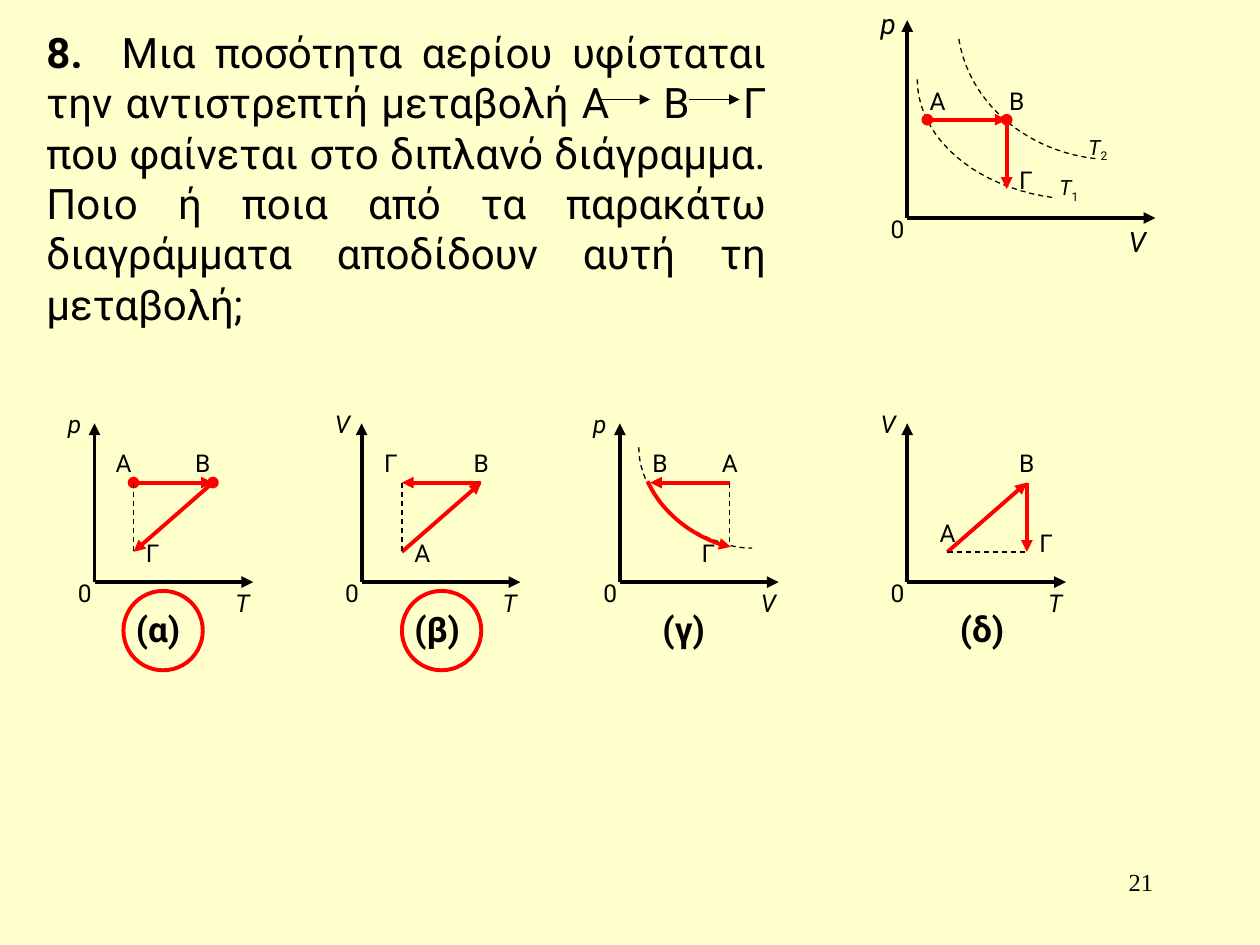
from pptx import Presentation
from pptx.dml.color import RGBColor
from pptx.enum.dml import MSO_LINE_DASH_STYLE as DASH
from pptx.enum.shapes import MSO_CONNECTOR as CONN, MSO_SHAPE as SHAPE
from pptx.enum.text import MSO_AUTO_SIZE as AUTO, PP_ALIGN as ALIGN
from pptx.oxml.ns import qn
from pptx.util import Inches, Pt
from lxml.etree import SubElement

COLORS = {"paper": "FFFFCC", "ink": "000000", "path_red": "FF0000"}
FONT = "Roboto"
THICK, THIN = 2.25, 0.75
FLOOR = 4.62


def rgb(name):
    return RGBColor.from_string(COLORS[name])


def add_run(p, text, size, font=FONT, bold=False, italic=False, gap=0, base=0):
    r = p.add_run()
    r.text = text
    r.font.size = Pt(size)
    r.font.name = font
    r.font.bold = bold
    r.font.italic = italic
    r.font.color.rgb = rgb("ink")
    rPr = r._r.get_or_add_rPr()
    if gap:
        rPr.set("spc", str(gap * 100))
    if base:
        rPr.set("baseline", str(base * 1000))


def add_box(s, x, y, w, h, align=ALIGN.LEFT):
    tf = s.shapes.add_textbox(Inches(x), Inches(y), Inches(w), Inches(h)).text_frame
    tf.word_wrap = True
    tf.auto_size = AUTO.SHAPE_TO_FIT_TEXT
    p = tf.paragraphs[0]
    p.alignment = align
    return p


def add_label(s, text, x, y, w=0.39, h=0.33, size=14, **style):
    p = add_box(s, x, y, w, h)
    add_run(p, text, size, **style)
    return p


def stroke(shape, color, width, dashed=False, head=None, tail=None):
    shape.line.color.rgb = rgb(color)
    shape.line.width = Pt(width)
    if dashed:
        shape.line.dash_style = DASH.DASH
    spPr = shape._element.spPr
    ln = spPr.find(qn("a:ln"))
    for tag, kind in (("a:headEnd", head), ("a:tailEnd", tail)):
        if kind:
            SubElement(ln, qn(tag), type=kind)
    SubElement(spPr, qn("a:effectLst"))


def add_line(s, start, end, color="ink", width=THIN, **ends):
    line = s.shapes.add_connector(CONN.STRAIGHT, *(Inches(v) for v in (*start, *end)))
    stroke(line, color, width, **ends)


def add_process(s, start, end, head=None):
    add_line(s, start, end, "path_red", THICK, head=head, tail="triangle")


def add_dashes(s, start, end):
    add_line(s, start, end, dashed=True)


def bezier(p0, p1, p2, p3, steps=20):
    for i in range(steps + 1):
        t = i / steps
        u = 1 - t
        yield tuple(Inches(u**3 * a + 3 * u * u * t * b + 3 * u * t * t * c + t**3 * d)
                    for a, b, c, d in zip(p0, p1, p2, p3))


def add_curve(s, knots, color="ink", width=THIN, **ends):
    points = []
    for i in range(0, len(knots) - 1, 3):
        points += list(bezier(*knots[i:i + 4]))[1 if i else 0:]
    builder = s.shapes.build_freeform(*points[0])
    builder.add_line_segments(points[1:], close=False)
    curve = builder.convert_to_shape()
    curve.fill.background()
    stroke(curve, color, width, **ends)


def add_axes(s, x, y, w, h, vertical, horizontal, size=14, inset=0.24):
    for end in ((x, y - h), (x + w, y)):
        add_line(s, (x, y), end, width=THICK, tail="triangle")
    add_label(s, vertical, x - 0.31, y - h - 0.16, size=size, italic=True)
    add_label(s, horizontal, x + w - inset, y, size=size, italic=True)
    add_label(s, "0", x - 0.23, y - 0.08, w=0.31)


def add_letters(s, *letters):
    for letter, x, y in letters:
        add_label(s, letter, x, y)


def add_ring(s, x):
    ring = s.shapes.add_shape(SHAPE.OVAL, Inches(x), Inches(4.69), Inches(0.63), Inches(0.63))
    ring.fill.background()
    stroke(ring, "path_red", THICK)


def add_question(s):
    p = add_box(s, 0.27, 0.16, 5.91, 2.5, ALIGN.JUSTIFY)
    add_run(p, "8.", 24, bold=True)
    add_run(p, " ", 24, bold=True, gap=11)
    add_run(p, "Μια ποσότητα αερίου υφίσταται την αντιστρεπτή μεταβολή Α", 24)
    add_run(p, " ", 24, gap=23)
    add_run(p, "Β", 24)
    add_run(p, " ", 24, gap=23)
    add_run(p, "Γ που φαίνεται στο διπλανό διάγραμμα. Ποιο ή ποια από τα "
               "παρακάτω διαγράμματα αποδίδουν αυτή τη μεταβολή;", 24)
    for x in (4.76, 5.47):
        add_line(s, (x, 0.79), (x + 0.4, 0.79), tail="triangle")


def add_given_diagram(s):
    add_curve(s, [(7.61, 0.31), (7.69, 0.81), (8.14, 1.2), (8.7, 1.26)], dashed=True)
    add_curve(s, [(7.28, 0.63), (7.28, 1.09), (7.74, 1.49), (8.37, 1.57)], dashed=True)
    for index, x, y in (("2", 8.54, 1.02), ("1", 8.31, 1.34)):
        p = add_label(s, "T", x, y, w=0.47, h=0.3, size=12, italic=True)
        add_run(p, index, 12, base=-25)
    add_axes(s, 7.2, 1.73, 1.97, 1.57, "p", "V", size=16, inset=0.31)
    add_process(s, (7.36, 0.95), (7.99, 0.95), head="oval")
    add_process(s, (7.99, 0.95), (7.99, 1.5), head="oval")
    add_letters(s, ("Α", 7.28, 0.63), ("Β", 7.91, 0.63), ("Γ", 7.99, 1.26))


def add_choices(s):
    for x, vertical, horizontal, caption, caption_x in (
            (0.75, "p", "T", "(α)", 0.98), (2.87, "V", "T", "(β)", 3.19),
            (4.92, "p", "V", "(γ)", 5.16), (7.2, "V", "T", "(δ)", 7.52)):
        add_axes(s, x, FLOOR, 1.26, 1.26, vertical, horizontal)
        add_label(s, caption, caption_x, 4.77, w=0.63, h=0.43, size=20, bold=True)


def add_choice_alpha(s):
    a, b, c = (1.06, 3.83), (1.69, 3.83), (1.06, 4.38)
    add_process(s, a, b, head="oval")
    add_process(s, b, c, head="oval")
    add_dashes(s, a, c)
    add_letters(s, ("Α", 0.82, 3.51), ("Β", 1.45, 3.51), ("Γ", 1.06, 4.22))


def add_choice_beta(s):
    a, b, c = (3.19, 4.38), (3.82, 3.83), (3.19, 3.83)
    add_process(s, a, b)
    add_process(s, b, c)
    add_dashes(s, c, a)
    add_letters(s, ("Α", 3.19, 4.22), ("Β", 3.66, 3.51), ("Γ", 2.95, 3.51))


def add_choice_gamma(s):
    add_curve(s, [(5.07, 3.55), (5.07, 3.88), (5.35, 4.2), (5.74, 4.31),
                  (5.81, 4.34), (5.89, 4.35), (5.97, 4.35)], dashed=True)
    add_process(s, (5.79, 3.83), (5.16, 3.83))
    add_curve(s, [(5.14, 3.82), (5.24, 4.04), (5.45, 4.23), (5.72, 4.32),
                  (5.74, 4.33), (5.77, 4.34), (5.8, 4.34)],
              "path_red", THICK, tail="triangle")
    add_dashes(s, (5.79, 3.83), (5.79, 4.3))
    add_letters(s, ("Α", 5.63, 3.51), ("Β", 5.08, 3.51), ("Γ", 5.47, 4.22))


def add_choice_delta(s):
    a, b, c = (7.52, 4.38), (8.15, 3.83), (8.15, 4.38)
    add_process(s, a, b)
    add_process(s, b, c)
    add_dashes(s, a, c)
    add_letters(s, ("Α", 7.36, 4.06), ("Β", 7.99, 3.51), ("Γ", 8.15, 4.14))


def main():
    prs = Presentation()
    prs.slide_width, prs.slide_height = Inches(10), Inches(7.5)
    s = prs.slides.add_slide(prs.slide_layouts[6])
    s.background.fill.solid()
    s.background.fill.fore_color.rgb = rgb("paper")
    add_run(add_box(s, 7.17, 6.83, 2.08, 0.5, ALIGN.RIGHT), "21", 14, font="Times New Roman")
    add_question(s)
    add_given_diagram(s)
    add_choices(s)
    add_choice_alpha(s)
    add_choice_beta(s)
    add_choice_gamma(s)
    add_choice_delta(s)
    for x in (0.98, 3.19):
        add_ring(s, x)
    prs.save("out.pptx")


if __name__ == "__main__":
    main()
